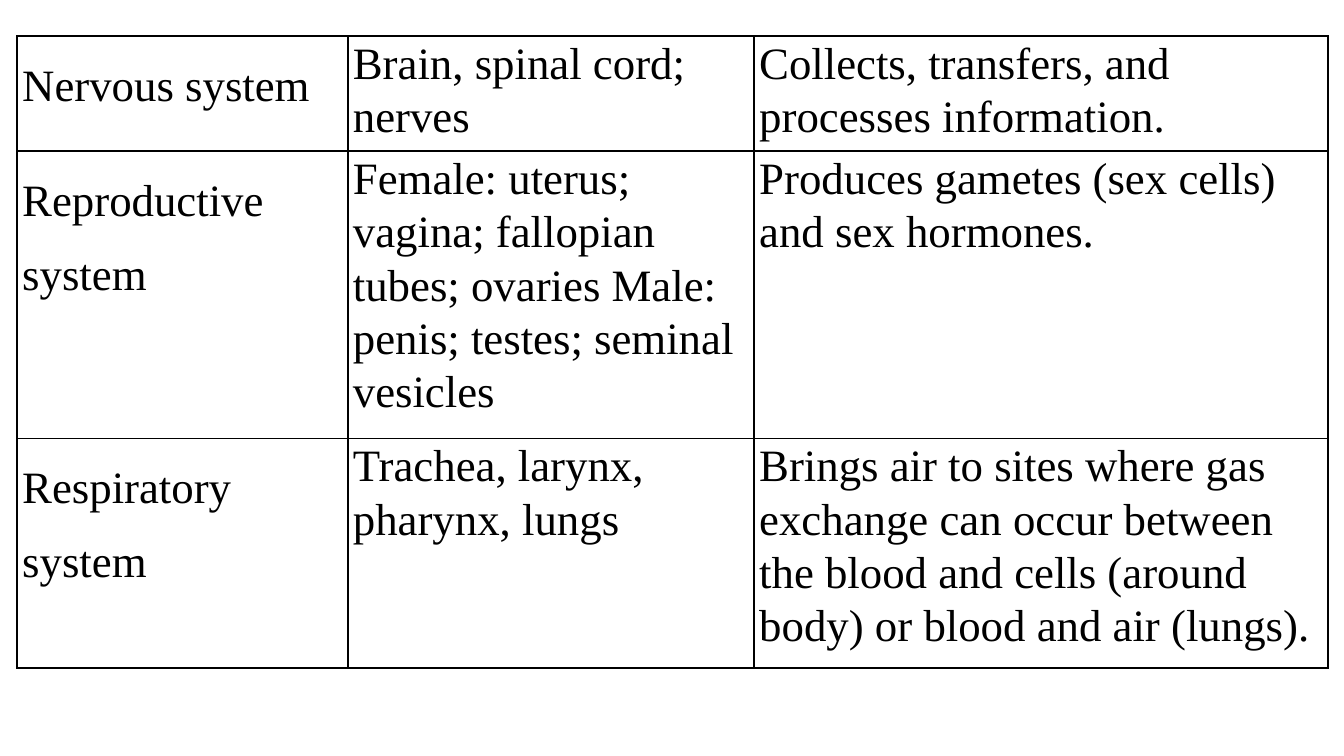
"""Builds a slide with a table of body systems, their organs and functions."""
from lxml.etree import SubElement
from pptx import Presentation
from pptx.dml.color import RGBColor
from pptx.enum.text import MSO_ANCHOR
from pptx.oxml.ns import qn
from pptx.util import Pt

PX = 9144
BLACK = "000000"
COLUMN_WIDTHS = [328, 403, 569]
ROW_HEIGHTS = [114, 285, 228]
LINE_SPACINGS = [1.5, 1.07, 1.07]
SYSTEMS = [
    ("Nervous system", "Brain, spinal cord; nerves",
     "Collects, transfers, and processes information."),
    ("Reproductive system",
     "Female: uterus; vagina; fallopian tubes; ovaries Male: penis; testes; seminal vesicles",
     "Produces gametes (sex cells) and sex hormones."),
    ("Respiratory system", "Trachea, larynx, pharynx, lungs",
     "Brings air to sites where gas exchange can occur between the blood and cells "
     "(around body) or blood and air (lungs)."),
]


def color(value):
    return RGBColor.from_string(value)


def add_borders(cell):
    properties = cell._tc.get_or_add_tcPr()
    for side in ("a:lnL", "a:lnR", "a:lnT", "a:lnB"):
        line = SubElement(properties, qn(side), w=str(Pt(1.5)))
        fill = SubElement(line, qn("a:solidFill"))
        SubElement(fill, qn("a:srgbClr"), val=BLACK)


presentation = Presentation()
presentation.slide_width = 1333 * PX
presentation.slide_height = 750 * PX
slide = presentation.slides.add_slide(presentation.slide_layouts[6])

table = slide.shapes.add_table(
    len(ROW_HEIGHTS), len(COLUMN_WIDTHS), 17 * PX, 36 * PX,
    sum(COLUMN_WIDTHS) * PX, sum(ROW_HEIGHTS) * PX).table
table.first_row = False
table.horz_banding = False
for column, width in zip(table.columns, COLUMN_WIDTHS):
    column.width = width * PX

for row, height, texts in zip(table.rows, ROW_HEIGHTS, SYSTEMS):
    row.height = height * PX
    for cell, text, spacing in zip(row.cells, texts, LINE_SPACINGS):
        cell.margin_left = cell.margin_right = 5 * PX
        cell.margin_top = cell.margin_bottom = 0
        cell.vertical_anchor = MSO_ANCHOR.TOP
        add_borders(cell)
        cell.fill.background()
        cell.text_frame.text = text
        paragraph = cell.text_frame.paragraphs[0]
        paragraph.line_spacing = spacing
        font = paragraph.runs[0].font
        font.name = "Times New Roman"
        font.size = Pt(32)
        font.color.rgb = color(BLACK)

presentation.save("out.pptx")
